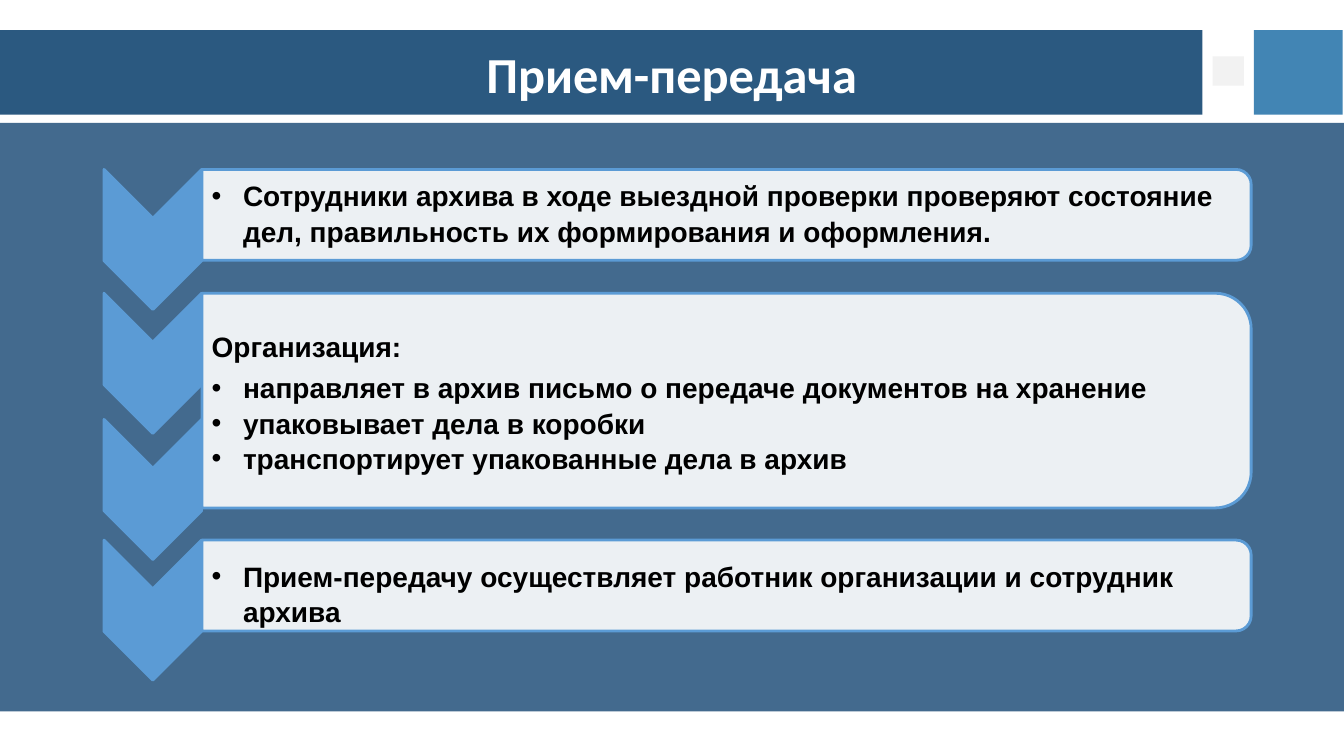
import pptx
import pptx.util
import pptx.dml.color
import pptx.enum.shapes
import pptx.enum.text
import pptx.oxml
import pptx.oxml.ns
from dataclasses import dataclass

Cm = pptx.util.Cm
Pt = pptx.util.Pt
Shape = pptx.enum.shapes.MSO_SHAPE
Align = pptx.enum.text.PP_ALIGN
Anchor = pptx.enum.text.MSO_ANCHOR


@dataclass(frozen=True)
class Theme:
    backdrop: str = "1F4E79"
    band: str = "2B5980"
    corner: str = "4285B4"
    marker: str = "F2F2F2"
    accent: str = "5B9BD5"
    paper: str = "FFFFFF"
    ink: str = "000000"
    title_font: str = "Calibri"
    body_font: str = "Arial"
    title_size: int = 36
    body_size: int = 20
    outline: int = 2
    line_spacing: float = 1.05


THEME = Theme()

TITLE = "Прием-передача"
TITLE_FRAME = (4.7, 0.76, 24.46, 2.16)

BACKGROUND = [
    ((0, 3.1, 33.87, 14.83), THEME.backdrop, 84),
    ((0, 0.76, 30.3, 2.13), THEME.band, 100),
    ((31.6, 0.76, 2.24, 2.13), THEME.corner, 100),
    ((30.56, 1.42, 0.79, 0.74), THEME.marker, 100),
]

CHEVRON_LEFT, CHEVRON_WIDTH, CHEVRON_HEIGHT = 2.62, 2.46, 3.53
CHEVRON_TOPS = [4.27, 7.39, 11.1 - 0.53, 13.61]
PANEL_LEFT, PANEL_WIDTH = 5.09, 26.44
TEXT_LEFT, TEXT_WIDTH = 5.08, 26.29
BULLET_INDENT = 0.79

STEPS = [
    {"row": 0, "height": 2.29, "text_top": 4.34, "text_height": 1.96, "heading": None,
     "bullets": ["Сотрудники архива в ходе выездной проверки проверяют состояние дел, "
                 "правильность их формирования и оформления."]},
    {"row": 1, "height": 5.41, "text_top": 8.13, "text_height": 3.84, "heading": "Организация:",
     "bullets": ["направляет в архив письмо о передаче документов на хранение",
                 "упаковывает дела в коробки",
                 "транспортирует упакованные дела в архив"]},
    {"row": 3, "height": 2.29, "text_top": 13.92, "text_height": 1.96, "heading": None,
     "bullets": ["Прием-передачу осуществляет работник организации и сотрудник архива"]},
]


def colour(value):
    return pptx.dml.color.RGBColor.from_string(value)


def add_block(page, kind, frame, fill, opacity=100, outline=None):
    block = page.shapes.add_shape(kind, *map(Cm, frame))
    block.shadow.inherit = False
    block.fill.solid()
    block.fill.fore_color.rgb = colour(fill)
    if opacity < 100:
        tint = block.element.spPr.find(".//" + pptx.oxml.ns.qn("a:srgbClr"))
        alpha = pptx.oxml.parse_xml(
            f'<a:alpha {pptx.oxml.ns.nsdecls("a")} val="{opacity * 1000}"/>')
        tint.append(alpha)
    if outline:
        block.line.color.rgb = colour(outline)
        block.line.width = Pt(THEME.outline)
    else:
        block.line.fill.background()
    return block


def add_turned_block(page, kind, frame, fill, opacity=100):
    left, top, width, height = frame
    shift = (width - height) / 2
    turned = (left + shift, top - shift, height, width)
    block = add_block(page, kind, turned, fill, opacity, THEME.accent)
    block.rotation = 90
    return block


def place(page, box, frame, anchor):
    box.left, box.top, box.width, box.height = map(Cm, frame)
    page.shapes.element.append(box.element)
    box.text_frame.word_wrap = True
    box.text_frame.auto_size = pptx.enum.text.MSO_AUTO_SIZE.NONE
    box.text_frame.vertical_anchor = anchor


def add_span(para, text, font, size, ink):
    span = para.add_run()
    span.text = text
    span.font.name = font
    span.font.size = Pt(size)
    span.font.bold = True
    span.font.color.rgb = colour(ink)


def set_bullet(para, shown):
    properties = para._p.get_or_add_pPr()
    indent = Cm(BULLET_INDENT) if shown else 0
    properties.set("marL", str(indent))
    properties.set("indent", str(-indent))
    names = pptx.oxml.ns.nsdecls("a")
    if shown:
        properties.append(pptx.oxml.parse_xml(f'<a:buFont {names} typeface="Arial"/>'))
        properties.append(pptx.oxml.parse_xml(f'<a:buChar {names} char="•"/>'))
    else:
        properties.append(pptx.oxml.parse_xml(f'<a:buNone {names}/>'))


def fill_list(box, heading, bullets):
    lines = [(heading, False)] if heading else []
    lines += [(bullet, True) for bullet in bullets]
    for number, (text, bulleted) in enumerate(lines):
        para = box.text_frame.add_paragraph() if number else box.text_frame.paragraphs[0]
        set_bullet(para, bulleted)
        para.alignment = Align.LEFT
        para.line_spacing = THEME.line_spacing
        para.space_before = Pt(0)
        para.space_after = Pt(0 if bulleted else 4.5)
        add_span(para, text, THEME.body_font, THEME.body_size, THEME.ink)


def main():
    deck = pptx.Presentation()
    deck.slide_width, deck.slide_height = Cm(33.87), Cm(19.05)
    page = deck.slides.add_slide(deck.slide_layouts.get_by_name("Comparison"))
    title, *bodies = list(page.placeholders)

    for frame, fill, opacity in BACKGROUND:
        add_block(page, Shape.RECTANGLE, frame, fill, opacity)

    place(page, title, TITLE_FRAME, Anchor.MIDDLE)
    para = title.text_frame.paragraphs[0]
    para.alignment = Align.CENTER
    add_span(para, TITLE, THEME.title_font, THEME.title_size, THEME.paper)

    for top in CHEVRON_TOPS:
        frame = (CHEVRON_LEFT, top, CHEVRON_WIDTH, CHEVRON_HEIGHT)
        add_turned_block(page, Shape.CHEVRON, frame, THEME.accent)

    for step, body in zip(STEPS, bodies):
        frame = (PANEL_LEFT, CHEVRON_TOPS[step["row"]], PANEL_WIDTH, step["height"])
        add_turned_block(page, Shape.ROUND_2_SAME_RECTANGLE, frame, THEME.paper, 90)
        text_frame = (TEXT_LEFT, step["text_top"], TEXT_WIDTH, step["text_height"])
        place(page, body, text_frame, Anchor.TOP)
        fill_list(body, step["heading"], step["bullets"])

    for spare in bodies[len(STEPS):]:
        page.shapes.element.remove(spare.element)

    deck.save("out.pptx")


if __name__ == "__main__":
    main()
